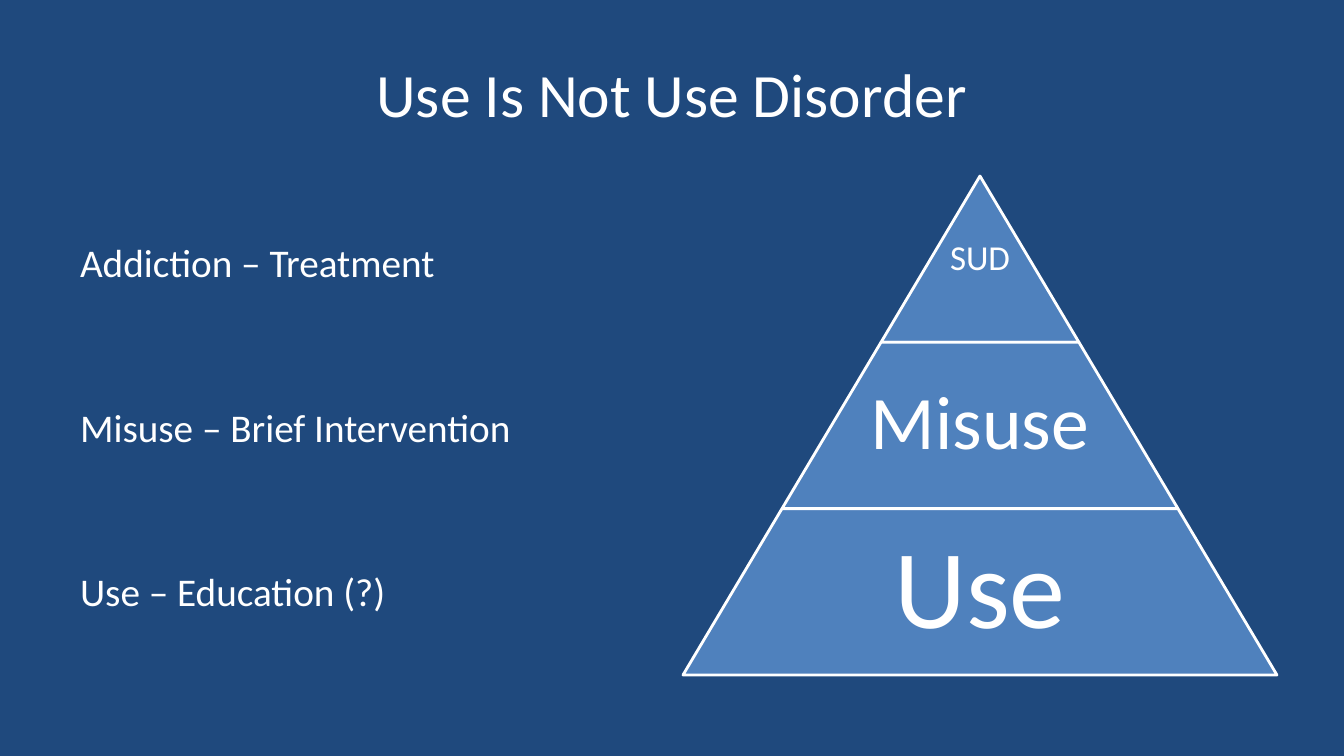
from lxml import etree
from pptx import Presentation
from pptx.dml.color import RGBColor
from pptx.enum.shapes import MSO_SHAPE
from pptx.enum.text import MSO_ANCHOR, MSO_AUTO_SIZE, PP_ALIGN
from pptx.oxml.ns import qn
from pptx.util import Pt

TRAPEZOID = MSO_SHAPE.TRAPEZOID
MIDDLE = MSO_ANCHOR.MIDDLE
NO_AUTOFIT = MSO_AUTO_SIZE.NONE
CENTER, LEFT = PP_ALIGN.CENTER, PP_ALIGN.LEFT
COLORS = {
    name: RGBColor.from_string(value)
    for name, value in {"background": "1F497D", "band": "4F81BD", "white": "FFFFFF"}.items()
}


def px(length):
    return round(length * 914400 / 100.8)


def style_paragraph(paragraph, text, size, alignment):
    paragraph.text = text
    paragraph.alignment = alignment
    paragraph.font.name = "Calibri"
    paragraph.font.size = Pt(size)
    paragraph.font.color.rgb = COLORS["white"]


presentation = Presentation()
presentation.slide_width = px(1344)
presentation.slide_height = px(756)
slide = presentation.slides.add_slide(presentation.slide_layouts[1])
slide.background.fill.solid()
slide.background.fill.fore_color.rgb = COLORS["background"]

title, body = slide.placeholders
title.left, title.top, title.width, title.height = px(67), px(30), px(1210), px(126)
title.text_frame.auto_size = NO_AUTOFIT
title.text_frame.vertical_anchor = MIDDLE
style_paragraph(title.text_frame.paragraphs[0], "Use Is Not Use Disorder", 44, CENTER)

body.left, body.top, body.width, body.height = px(67), px(177), px(594), px(499)
body_frame = body.text_frame
body_frame.auto_size = NO_AUTOFIT
body_frame.vertical_anchor = MIDDLE
responses = ["Addiction – Treatment", "Misuse – Brief Intervention", "Use – Education (?)"]
for index, response in enumerate(responses):
    paragraph = body_frame.add_paragraph() if index else body_frame.paragraphs[0]
    style_paragraph(paragraph, response, 28, LEFT)
    paragraph.space_before = Pt(84 if index else 0)
    properties = paragraph._p.get_or_add_pPr()
    properties.set("marL", str(px(3)))
    properties.set("indent", "0")
    bullet = etree.Element(qn("a:buNone"))
    properties.insert_element_before(bullet, "a:tabLst", "a:defRPr", "a:extLst")

PYRAMID_CENTER, PYRAMID_TOP = 980, 176
PYRAMID_WIDTH, PYRAMID_HEIGHT = 594, 499
levels = [("SUD", 25, 198), ("Misuse", 54, 257), ("Use", 80, 386)]
band_height = PYRAMID_HEIGHT / len(levels)
band_step = PYRAMID_WIDTH / len(levels)
pyramid = slide.shapes.add_group_shape()
for index, (label, size, label_width) in enumerate(levels):
    top = PYRAMID_TOP + index * band_height
    width = (index + 1) * band_step
    band = pyramid.shapes.add_shape(
        TRAPEZOID, px(PYRAMID_CENTER - width / 2), px(top), px(width), px(band_height)
    )
    band.adjustments[0] = band_step / 2 / band_height
    band.shadow.inherit = False
    band.fill.solid()
    band.fill.fore_color.rgb = COLORS["band"]
    band.line.color.rgb = COLORS["white"]
    band.line.width = Pt(2)

    label_box = pyramid.shapes.add_textbox(
        px(PYRAMID_CENTER - label_width / 2), px(top), px(label_width), px(band_height)
    )
    label_frame = label_box.text_frame
    label_frame.word_wrap = True
    label_frame.vertical_anchor = MIDDLE
    label_frame.margin_top = label_frame.margin_bottom = px(3)
    style_paragraph(label_frame.paragraphs[0], label, size, CENTER)
    label_frame.paragraphs[0].line_spacing = 0.9

presentation.save("out.pptx")
